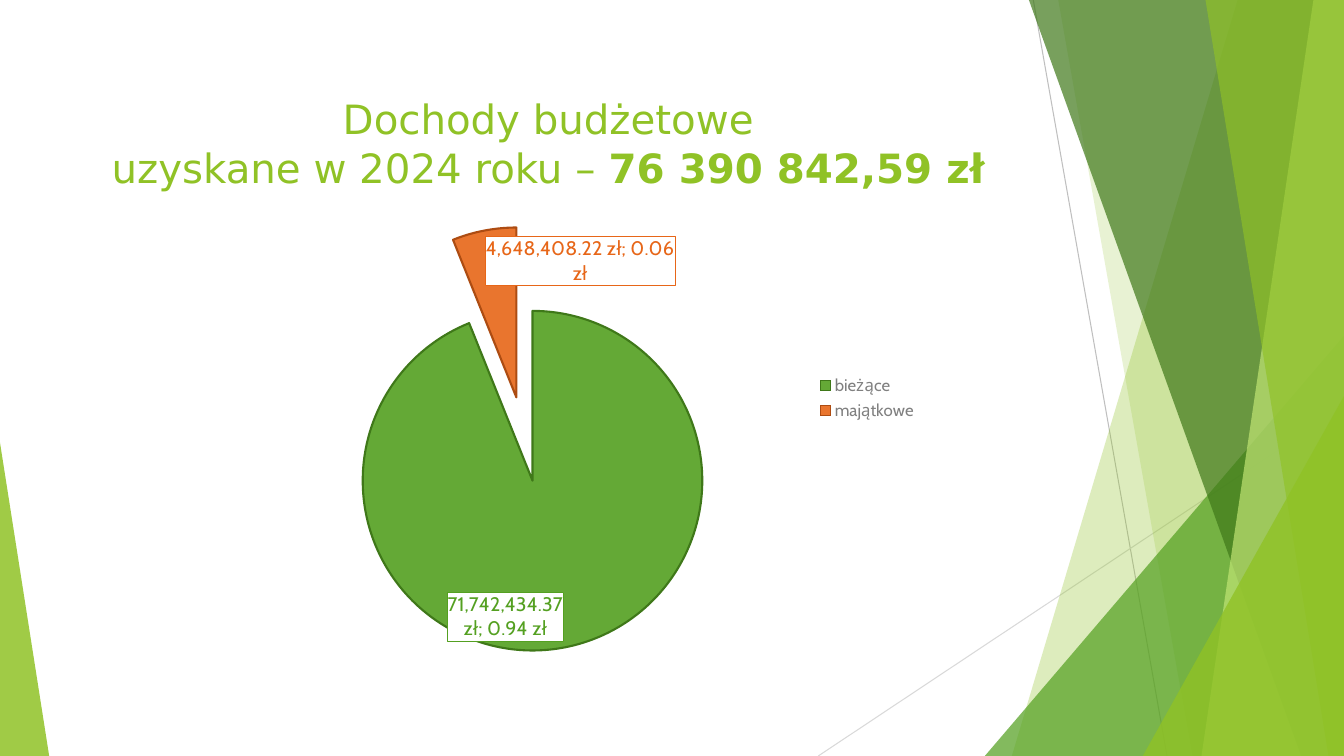
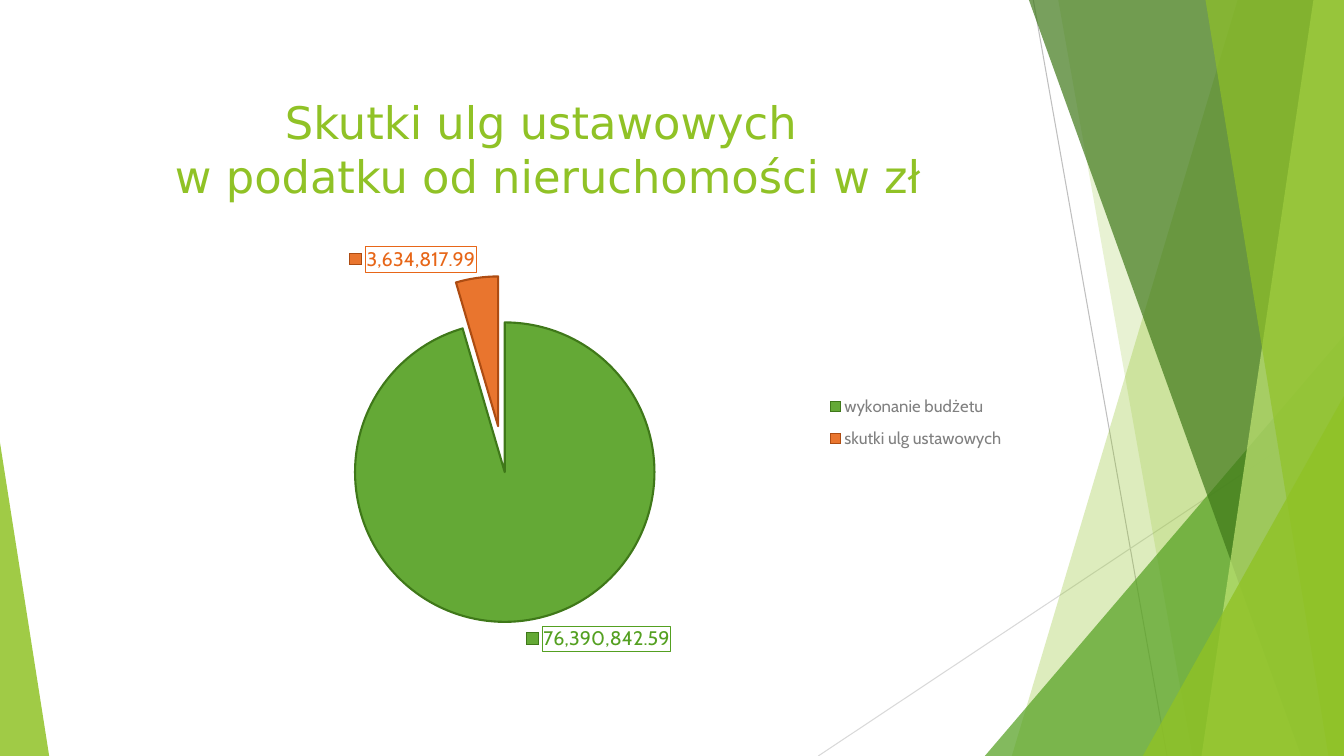
"""Build two budget slides, each with a title and an exploded pie chart."""
from pptx import Presentation
from pptx.chart.data import CategoryChartData
from pptx.dml.color import RGBColor
from pptx.enum.chart import XL_CHART_TYPE, XL_LABEL_POSITION, XL_LEGEND_POSITION
from pptx.enum.shapes import MSO_CONNECTOR, MSO_SHAPE
from pptx.enum.text import MSO_ANCHOR, PP_ALIGN
from pptx.oxml import parse_xml
from pptx.oxml.ns import nsdecls, qn
from pptx.util import Cm, Pt

PIE = XL_CHART_TYPE.PIE
IN_END = XL_LABEL_POSITION.INSIDE_END
OUT_END = XL_LABEL_POSITION.OUTSIDE_END
RIGHT = XL_LEGEND_POSITION.RIGHT
STRAIGHT = MSO_CONNECTOR.STRAIGHT
TRIANGLE = MSO_SHAPE.ISOSCELES_TRIANGLE
TOP = MSO_ANCHOR.TOP
CENTER = PP_ALIGN.CENTER

WIDE, HIGH = 33.87, 19.05
LIME, GREEN, DARK, PALE = "90C226", "54A021", "3F7819", "C0E474"
ORANGE, RUST, GREY = "E76618", "AD4C12", "808080"
SLICES = [(GREEN, DARK), (ORANGE, RUST)]
HEAD, BODY = "DejaVu Sans", "Cabin"

RAYS = [
    (26.04, 0, 29.41, HIGH, "BFBFBF"),
    (WIDE, 10.24, 20.62, HIGH, "D9D9D9"),
]
BACK = [(31.19, 25.5, LIME, 30), (26.67, 30.05, LIME, 20)]
FRONT = [(25.93, 32.79, DARK, 70), (33.1, 30.28, PALE, 70), (30.38, 33.48, LIME, 65)]


def rgb(code):
    """Turn a hex string into a colour."""
    return RGBColor.from_string(code)


def put(item, **values):
    """Set attributes from format values."""
    for name, value in values.items():
        setattr(item, name, value)


def paint(item, code, alpha):
    """Give a shape or chart point a see-through fill."""
    item.fill.solid()
    item.fill.fore_color.rgb = rgb(code)
    color = next(item.fill._xPr.iter(qn("a:srgbClr")))
    color.append(parse_xml(f'<a:alpha {nsdecls("a")} val="{alpha * 1000}"/>'))


def ray(slide, x1, y1, x2, y2, code):
    """Draw a thin line."""
    line = slide.shapes.add_connector(STRAIGHT, Cm(x1), Cm(y1), Cm(x2), Cm(y2))
    line.line.color.rgb = rgb(code)
    line.line.width = Pt(0.75)
    line._element.spPr.append(parse_xml(f'<a:effectLst {nsdecls("a")}/>'))


def finish(shape, code, alpha):
    """Fill a shape and drop its line and shadow."""
    shape.shadow.inherit = False
    paint(shape, code, alpha)
    shape.line.fill.background()


def band(slide, top, foot, code, alpha):
    """Draw a slanted band that reaches the right edge."""
    pen = slide.shapes.build_freeform(Cm(top), 0)
    pen.add_line_segments(
        [(Cm(WIDE), 0), (Cm(WIDE), Cm(HIGH)), (Cm(foot), Cm(HIGH))], close=True)
    finish(pen.convert_to_shape(), code, alpha)


def wedge(slide, left, width, top, tip, code, alpha):
    """Draw a right triangle that stands on the bottom edge."""
    shape = slide.shapes.add_shape(
        TRIANGLE, Cm(left), Cm(top), Cm(width), Cm(HIGH - top))
    shape.adjustments[0] = tip
    finish(shape, code, alpha)


def decor(slide):
    """Draw the rays, bands and wedges that the slides share."""
    for item in RAYS:
        ray(slide, *item)
    for item in BACK:
        band(slide, *item)
    wedge(slide, 24.82, 9.05, 8.46, 1, GREEN, 72)
    for item in FRONT:
        band(slide, *item)
    wedge(slide, 28.8, 5.07, 9.98, 1, LIME, 80)
    wedge(slide, 0, 1.24, 11.15, 0, LIME, 85)


def title(slide, size, first, second, strong=""):
    """Write a centred title on two lines with an optional bold end."""
    box = slide.shapes.add_textbox(Cm(1.88), Cm(2.26), Cm(23.88), Cm(3.66))
    put(box.text_frame, word_wrap=True, vertical_anchor=TOP)
    para = box.text_frame.paragraphs[0]
    para.alignment = CENTER
    for text, bold in ((first, False), (second, False), (strong, True)):
        if not text:
            continue
        if text == second:
            para.add_line_break()
        run = para.add_run()
        run.text = text
        put(run.font, name=HEAD, size=Pt(size), bold=bold)
        run.font.color.rgb = rgb(LIME)


def place(part, index, mode, area):
    """Fix the place of a chart part by fractions of the chart."""
    for old in part.findall(qn("c:layout")):
        part.remove(old)
    sizes = "".join(f'<c:{k} val="{v}"/>' for k, v in zip("xywh", area))
    part.insert(index, parse_xml(
        f'<c:layout {nsdecls("c")}><c:manualLayout>{mode}'
        '<c:xMode val="edge"/><c:yMode val="edge"/>'
        f'{sizes}</c:manualLayout></c:layout>'))


def label(index, code, style, spot):
    """Make a boxed data label for one slice."""
    ink = f'<a:solidFill><a:srgbClr val="{code}"/></a:solidFill>'
    shape = "inEnd" if spot == IN_END else "outEnd"
    mask = style.replace('"', "&quot;")
    share, key = (1, 0) if spot == IN_END else (0, 1)
    return parse_xml(
        f'<c:dLbl {nsdecls("c", "a")}><c:idx val="{index}"/>'
        f'<c:numFmt formatCode="{mask}" sourceLinked="0"/>'
        '<c:spPr><a:solidFill><a:srgbClr val="FFFFFF"/></a:solidFill>'
        f'<a:ln w="9525">{ink}</a:ln></c:spPr>'
        '<c:txPr><a:bodyPr wrap="square"/><a:p><a:pPr>'
        f'<a:defRPr sz="1400" b="0">{ink}<a:latin typeface="{BODY}"/></a:defRPr>'
        f'</a:pPr></a:p></c:txPr><c:dLblPos val="{shape}"/>'
        f'<c:showLegendKey val="{key}"/><c:showVal val="1"/>'
        '<c:showCatName val="0"/><c:showSerName val="0"/>'
        f'<c:showPercent val="{share}"/><c:showBubbleSize val="0"/>'
        '<c:separator>; </c:separator></c:dLbl>')


def pie(slide, box, names, values, style, spot, burst, plot, legend):
    """Add a pie chart whose second slice is pulled out."""
    data = CategoryChartData(number_format=style)
    data.categories = names
    data.add_series("Series 1", values)
    chart = slide.shapes.add_chart(PIE, *map(Cm, box), data).chart
    put(chart, has_title=False, has_legend=True)
    put(chart.font, name=BODY, size=Pt(10))
    put(chart.legend, position=RIGHT, include_in_layout=False)
    put(chart.legend.font, name=BODY, size=Pt(12))
    chart.legend.font.color.rgb = rgb(GREY)
    chart.plots[0].vary_by_categories = True
    series = chart.plots[0].series[0]
    tags = series.data_labels
    put(tags, number_format=style, number_format_is_linked=False, position=spot,
        show_value=True, show_percentage=spot == IN_END,
        show_legend_key=spot == OUT_END)
    for index, (code, edge) in enumerate(SLICES):
        form = series.points[index].format
        paint(form, code, 90)
        form.line.color.rgb = rgb(edge)
        form.line.width = Pt(1.5)
        tags._element.insert(index, label(index, code, style, spot))
    small = series._element.findall(qn("c:dPt"))[1]
    small.find(qn("c:spPr")).addprevious(
        parse_xml(f'<c:explosion {nsdecls("c")} val="{burst}"/>'))
    area = next(chart._chartSpace.iter(qn("c:plotArea")))
    place(area, 0, '<c:layoutTarget val="inner"/>', plot)
    place(chart.legend._element, 1, "", legend)


def main():
    """Build and save the deck."""
    deck = Presentation()
    put(deck, slide_width=Cm(WIDE), slide_height=Cm(HIGH))
    income, relief = [deck.slides.add_slide(deck.slide_layouts[6]) for _ in range(2)]
    for slide in (income, relief):
        decor(slide)
    title(income, 28.8, "Dochody budżetowe", "uzyskane w 2024 roku – ",
          "76 390 842,59 zł")
    pie(income, (1.88, 5.13, 25.45, 11.66), ("bieżące", "majątkowe"),
        (71742434.37, 4648408.22), '#,##0.00\\ "zł"', IN_END, 50,
        (0.285, 0.232, 0.337, 0.734), (0.73, 0.36, 0.11, 0.12))
    title(relief, 32, "Skutki ulg ustawowych ", "w podatku od nieruchomości w zł")
    pie(relief, (1.88, 5.31, 26.67, 11.48),
        ("wykonanie budżetu", "skutki ulg ustawowych"),
        (76390842.59, 3634817.99), "#,##0.00", OUT_END, 31,
        (0.265, 0.245, 0.283, 0.658), (0.7, 0.38, 0.19, 0.17))
    deck.save("out.pptx")


if __name__ == "__main__":
    main()
